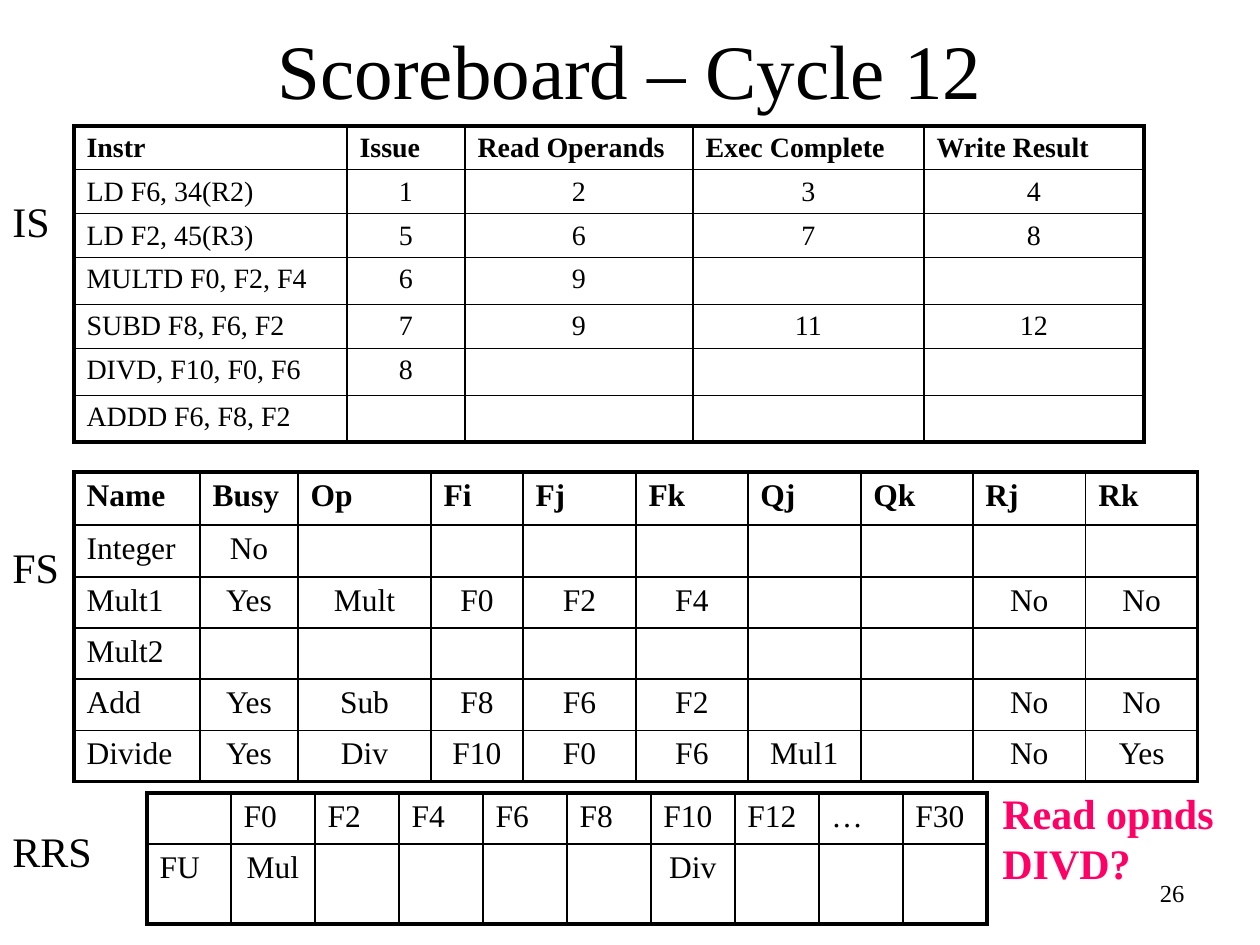
import pptx
import pptx.dml.color
import pptx.enum.text
import pptx.oxml.ns
import pptx.util
from lxml import etree

PX = 914400 / 126
BLACK = pptx.dml.color.RGBColor(0x00, 0x00, 0x00)
PINK = pptx.dml.color.RGBColor(0xFF, 0x00, 0x66)
FACE = "Times New Roman"
ALIGN = pptx.enum.text.PP_ALIGN
ANCHOR = pptx.enum.text.MSO_ANCHOR
AUTOSIZE = pptx.enum.text.MSO_AUTO_SIZE
qn = pptx.oxml.ns.qn


def px(*lengths):
    return [pptx.util.Emu(round(length * PX)) for length in lengths]


def write(paragraph, text, size, align=ALIGN.LEFT, bold=False, color=BLACK):
    paragraph.alignment = align
    if not text:
        paragraph._p.get_or_add_endParaRPr().set("sz", str(size * 100))
        return
    run = paragraph.add_run()
    run.text = text
    font_format = {"name": FACE, "size": pptx.util.Pt(size), "bold": bold}
    for attribute, value in font_format.items():
        setattr(run.font, attribute, value)
    run.font.color.rgb = color


deck = pptx.Presentation()
deck.slide_width, deck.slide_height = px(1260, 945)
slide = deck.slides.add_slide(deck.slide_layouts[5])

heading = slide.shapes.title
heading.left, heading.top, heading.width, heading.height = px(94, -10, 1072, 158)
heading.text_frame.vertical_anchor = ANCHOR.MIDDLE
write(heading.text_frame.paragraphs[0], "Scoreboard – Cycle 12", 44, ALIGN.CENTER)

instruction_status = [
    ["Instr", "Issue", "Read Operands", "Exec Complete", "Write Result"],
    ["LD F6, 34(R2)", "1", "2", "3", "4"],
    ["LD F2, 45(R3)", "5", "6", "7", "8"],
    ["MULTD F0, F2, F4", "6", "9", "", ""],
    ["SUBD F8, F6, F2", "7", "9", "11", "12"],
    ["DIVD, F10, F0, F6", "8", "", "", ""],
    ["ADDD F6, F8, F2", "", "", "", ""],
]
unit_status = [
    ["Name", "Busy", "Op", "Fi", "Fj", "Fk", "Qj", "Qk", "Rj", "Rk"],
    ["Integer", "No", "", "", "", "", "", "", "", ""],
    ["Mult1", "Yes", "Mult", "F0", "F2", "F4", "", "", "No", "No"],
    ["Mult2", "", "", "", "", "", "", "", "", ""],
    ["Add", "Yes", "Sub", "F8", "F6", "F2", "", "", "No", "No"],
    ["Divide", "Yes", "Div", "F10", "F0", "F6", "Mul1", "", "No", "Yes"],
]
register_status = [
    ["", "F0", "F2", "F4", "F6", "F8", "F10", "F12", "…", "F30"],
    ["FU", "Mul", "", "", "", "", "Div", "", "", ""],
]
scoreboard = [
    (instruction_status, 74, 126, [273, 118, 228, 231, 220],
     [43, 44, 44, 47, 43, 44, 44], 16, True),
    (unit_status, 74, 472, [126, 98, 133, 92] + [113, 112] * 3,
     [53, 52, 48, 47, 48, 48], 18, True),
    (register_status, 147, 793, [84] * 10, [48, 80], 18, False),
]

for entries, left, top, widths, heights, size, bold_header in scoreboard:
    last_row, last_column = len(heights) - 1, len(widths) - 1
    grid = slide.shapes.add_table(
        len(heights), len(widths), *px(left, top, sum(widths), sum(heights))
    ).table
    for attribute, value in {"first_row": False, "horz_banding": False}.items():
        setattr(grid, attribute, value)
    for column, width in zip(grid.columns, px(*widths)):
        column.width = width
    for row, height in zip(grid.rows, px(*heights)):
        row.height = height
    for r, entry_row in enumerate(entries):
        for c, entry in enumerate(entry_row):
            cell = grid.cell(r, c)
            paragraph = cell.text_frame.paragraphs[0]
            align = ALIGN.CENTER if r and c else ALIGN.LEFT
            write(paragraph, entry, size, align, bold_header and r == 0)
            before = etree.SubElement(paragraph._p.get_or_add_pPr(), qn("a:spcBef"))
            etree.SubElement(before, qn("a:spcPct"), val="20000")
            outer_edges = {
                "a:lnL": c == 0,
                "a:lnR": c == last_column,
                "a:lnT": r == 0,
                "a:lnB": r == last_row,
            }
            for edge, outer in outer_edges.items():
                weight = pptx.util.Pt(2.25 if outer else 1)
                border = etree.SubElement(
                    cell._tc.get_or_add_tcPr(), qn(edge), w=str(weight)
                )
                ink = etree.SubElement(border, qn("a:solidFill"))
                etree.SubElement(ink, qn("a:srgbClr"), val=str(BLACK))
            cell.fill.background()

captions = [
    ("26", (935, 872, 262, 63), 14, ALIGN.RIGHT, False, BLACK, True),
    ("IS", (0, 189, 63, 63), 24, ALIGN.LEFT, False, BLACK, False),
    ("FS", (0, 535, 72, 63), 24, ALIGN.LEFT, False, BLACK, False),
    ("RRS", (0, 819, 105, 63), 24, ALIGN.LEFT, False, BLACK, False),
    ("Read opnds DIVD?", (990, 781, 248, 113), 24, ALIGN.LEFT, True, PINK, True),
]
for text, place, size, align, bold, color, wrap in captions:
    frame = slide.shapes.add_textbox(*px(*place)).text_frame
    frame_format = {"word_wrap": wrap, "auto_size": AUTOSIZE.SHAPE_TO_FIT_TEXT}
    if align == ALIGN.RIGHT:
        frame_format["auto_size"] = AUTOSIZE.NONE
    for attribute, value in frame_format.items():
        setattr(frame, attribute, value)
    write(frame.paragraphs[0], text, size, align, bold, color)

deck.save("out.pptx")
